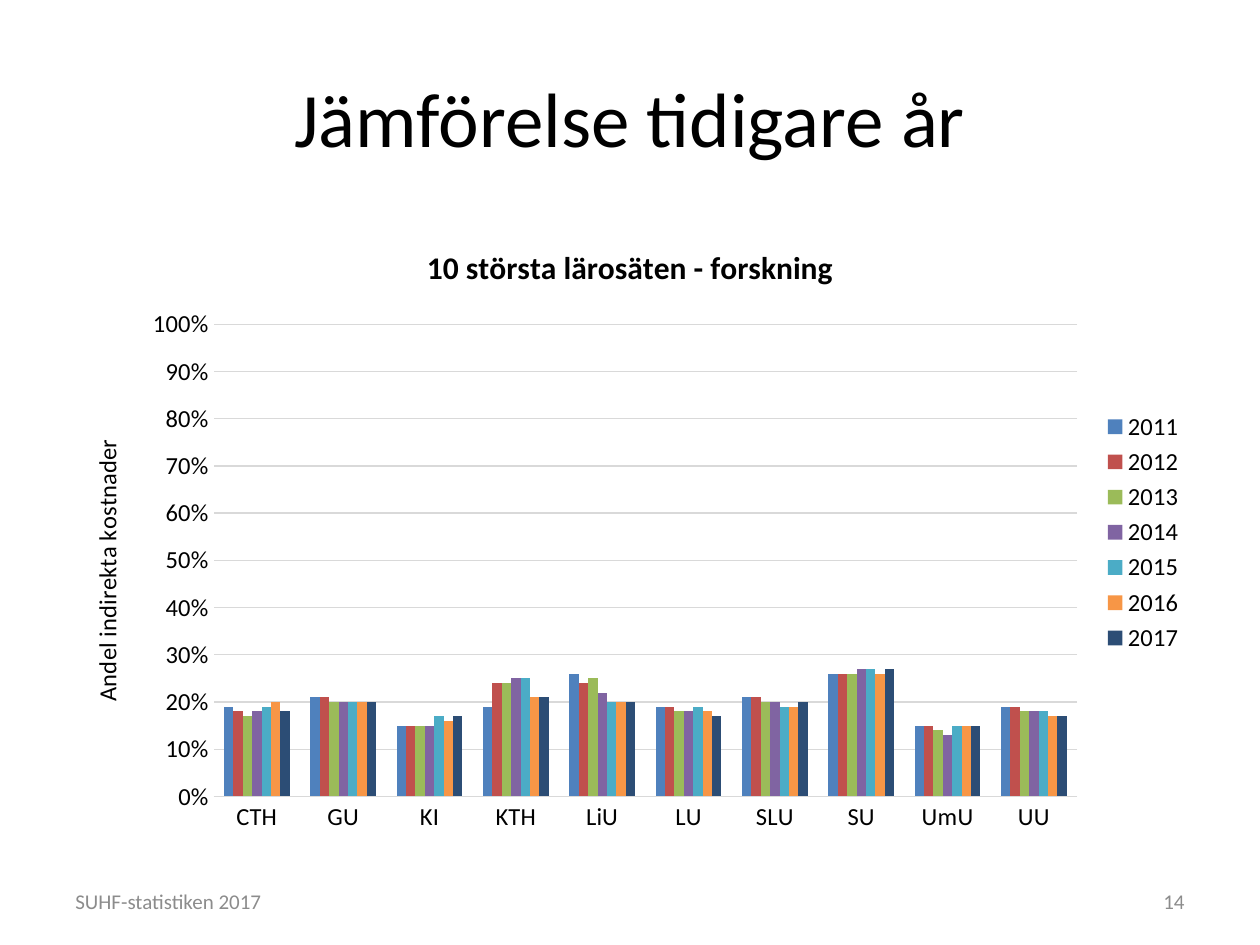
from pptx import Presentation
from pptx.chart.data import CategoryChartData
from pptx.dml.color import RGBColor
from pptx.enum.chart import XL_CHART_TYPE as ChartType, XL_LEGEND_POSITION as LegendPos, XL_TICK_MARK as TickMark
from pptx.enum.text import MSO_ANCHOR as Anchor, PP_ALIGN as Align
from pptx.util import Inches, Pt


def rgb(value):
    return RGBColor.from_string(value)


def write(frame, text, size, color="000000", align=None, bold=False):
    paragraph = frame.paragraphs[0]
    paragraph.alignment = align
    run = paragraph.add_run()
    run.text = text
    font = run.font
    font.name, font.size, font.bold = "Calibri", Pt(size), bold
    font.color.rgb = rgb(color)


prs = Presentation()
prs.slide_width, prs.slide_height = Inches(10), Inches(7.5)
slide = prs.slides.add_slide(prs.slide_layouts[6])

# Share of indirect costs per university and year
universities = ["CTH", "GU", "KI", "KTH", "LiU", "LU", "SLU", "SU", "UmU", "UU"]
years = [
    ("2011", "4F81BD", [0.19, 0.21, 0.15, 0.19, 0.26, 0.19, 0.21, 0.26, 0.15, 0.19]),
    ("2012", "C0504D", [0.18, 0.21, 0.15, 0.24, 0.24, 0.19, 0.21, 0.26, 0.15, 0.19]),
    ("2013", "9BBB59", [0.17, 0.2, 0.15, 0.24, 0.25, 0.18, 0.2, 0.26, 0.14, 0.18]),
    ("2014", "8064A2", [0.18, 0.2, 0.15, 0.25, 0.22, 0.18, 0.2, 0.27, 0.13, 0.18]),
    ("2015", "4BACC6", [0.19, 0.2, 0.17, 0.25, 0.2, 0.19, 0.19, 0.27, 0.15, 0.18]),
    ("2016", "F79646", [0.2, 0.2, 0.16, 0.21, 0.2, 0.18, 0.19, 0.26, 0.15, 0.17]),
    ("2017", "2C4D75", [0.18, 0.2, 0.17, 0.21, 0.2, 0.17, 0.2, 0.27, 0.15, 0.17]),
]
shares = CategoryChartData(number_format="0%")
shares.categories = universities
for year, _, values in years:
    shares.add_series(year, values)

chart = slide.shapes.add_chart(
    ChartType.COLUMN_CLUSTERED, Inches(0.5), Inches(1.75), Inches(9), Inches(4.95), shares
).chart
chart.font.name, chart.font.size = "Calibri", Pt(14)
chart.font.color.rgb = rgb("000000")
write(chart.chart_title.text_frame, "10 största lärosäten - forskning", 18, bold=True)
chart.chart_title.include_in_layout = False

# Columns
plot = chart.plots[0]
plot.gap_width, plot.overlap = 219, 0
plot.vary_by_categories = False
for series, (_, color, _) in zip(plot.series, years):
    series.format.fill.solid()
    series.format.fill.fore_color.rgb = rgb(color)

# Axes and gridlines
university_axis, share_axis = chart.category_axis, chart.value_axis
for axis in (university_axis, share_axis):
    axis.major_tick_mark = axis.minor_tick_mark = TickMark.NONE
share_axis.minimum_scale, share_axis.maximum_scale = 0, 1
share_axis.major_unit = 0.1
share_axis.tick_labels.number_format = "0%"
share_axis.tick_labels.number_format_is_linked = False
share_axis.format.line.fill.background()
for line in (university_axis.format.line, share_axis.major_gridlines.format.line):
    line.color.rgb = rgb("D9D9D9")
    line.width = Pt(0.75)
write(share_axis.axis_title.text_frame, "Andel indirekta kostnader", 14)

# Legend
chart.has_legend = True
chart.legend.position = LegendPos.RIGHT
chart.legend.include_in_layout = False

# Title, footer and page number
for text, left, top, width, height, size, color, align in [
    ("Jämförelse tidigare år", 0.5, 0.3, 9, 1.25, 44, "000000", Align.CENTER),
    ("SUHF-statistiken 2017", 0.5, 6.95, 4.5, 0.4, 12, "8C8C8C", Align.LEFT),
    ("14", 7.17, 6.95, 2.33, 0.4, 12, "8C8C8C", Align.RIGHT),
]:
    frame = slide.shapes.add_textbox(Inches(left), Inches(top), Inches(width), Inches(height)).text_frame
    frame.word_wrap = True
    frame.vertical_anchor = Anchor.MIDDLE
    write(frame, text, size, color, align)

prs.save("out.pptx")
